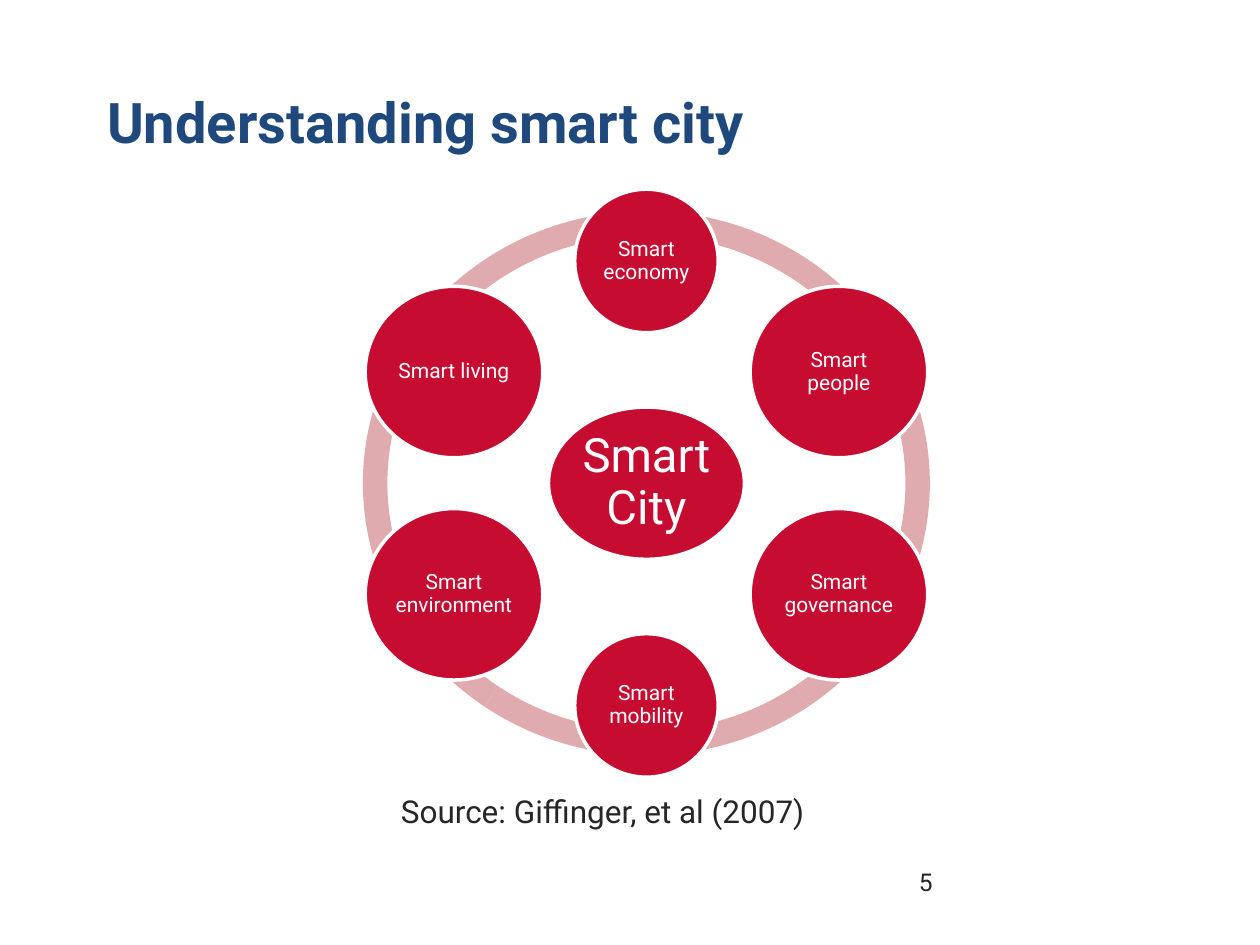
from math import cos, radians, sin

from pptx import Presentation
from pptx.dml.color import RGBColor
from pptx.enum.shapes import MSO_SHAPE
from pptx.enum.text import MSO_ANCHOR, PP_ALIGN
from pptx.util import Pt

FONT = "Roboto"
RED, PINK, WHITE, NAVY, INK = "C60C30", "DFABAE", "FFFFFF", "1F497D", "262626"
CENTER_X, CENTER_Y = 369.4, 276.1
ORBIT = 127
SMALL, LARGE = (82, 82), (101.5, 98)
THEMES = [
    ("Smart economy", SMALL),
    ("Smart people", LARGE),
    ("Smart governance", LARGE),
    ("Smart mobility", SMALL),
    ("Smart environment", LARGE),
    ("Smart living", LARGE),
]
ARCS = [(126, 162), (90, 126), (54, 90), (18, 54), (198, 18), (162, 198)]


def color(value):
    return RGBColor.from_string(value)


def add_run(p, text, size, fill, bold=False):
    r = p.add_run()
    r.text = text
    r.font.name = FONT
    r.font.size = Pt(size)
    r.font.bold = bold
    r.font.color.rgb = color(fill)


def add_title(s, text):
    sp = s.shapes.title
    sp.left, sp.top, sp.width, sp.height = Pt(54), Pt(36), Pt(612), Pt(66)
    tf = sp.text_frame
    tf.vertical_anchor = MSO_ANCHOR.MIDDLE
    p = tf.paragraphs[0]
    p.alignment = PP_ALIGN.LEFT
    add_run(p, text, 32, NAVY, True)


def add_text(s, text, x, y, w, h, size, align=PP_ALIGN.LEFT):
    tf = s.shapes.add_textbox(Pt(x), Pt(y), Pt(w), Pt(h)).text_frame
    tf.word_wrap = True
    p = tf.paragraphs[0]
    p.alignment = align
    add_run(p, text, size, INK)


def add_centered(s, kind, cx, cy, w, h, fill):
    sp = s.shapes.add_shape(kind, Pt(cx - w / 2), Pt(cy - h / 2), Pt(w), Pt(h))
    sp.shadow.inherit = False
    sp.fill.solid()
    sp.fill.fore_color.rgb = color(fill)
    return sp


def add_arc(s, start, end):
    sp = add_centered(s, MSO_SHAPE.BLOCK_ARC, CENTER_X, CENTER_Y, 324, 311, PINK)
    sp.line.fill.background()
    for i, value in enumerate((start * 0.6, end * 0.6, 0.045)):
        sp.adjustments[i] = value


def add_bubble(s, text, cx, cy, w, h, size, inset):
    sp = add_centered(s, MSO_SHAPE.OVAL, cx, cy, w, h, RED)
    sp.line.color.rgb = color(WHITE)
    sp.line.width = Pt(2)
    tf = sp.text_frame
    tf.word_wrap = True
    tf.vertical_anchor = MSO_ANCHOR.MIDDLE
    tf.margin_left = tf.margin_right = tf.margin_top = tf.margin_bottom = Pt(inset)
    p = tf.paragraphs[0]
    p.alignment = PP_ALIGN.CENTER
    p.line_spacing = 0.9
    add_run(p, text, size, WHITE)


def main():
    prs = Presentation()
    prs.slide_width, prs.slide_height = Pt(720), Pt(540)
    s = prs.slides.add_slide(prs.slide_layouts[5])
    add_title(s, "Understanding smart city")
    for start, end in ARCS:
        add_arc(s, start, end)
    add_bubble(s, "Smart City", CENTER_X, CENTER_Y, 112, 87, 27, 2.7)
    for i, (text, (w, h)) in enumerate(THEMES):
        angle = radians(i * 360 / len(THEMES))
        cx = CENTER_X + ORBIT * sin(angle)
        cy = CENTER_Y - ORBIT * cos(angle)
        add_bubble(s, text, cx, cy, w, h, 12, 1.2)
    add_text(s, "5", 474, 492, 66, 36, 14, PP_ALIGN.RIGHT)
    add_text(s, "Source: Giffinger, et al (2007)", 222, 449, 342, 29, 18)
    prs.save("out.pptx")


if __name__ == "__main__":
    main()
